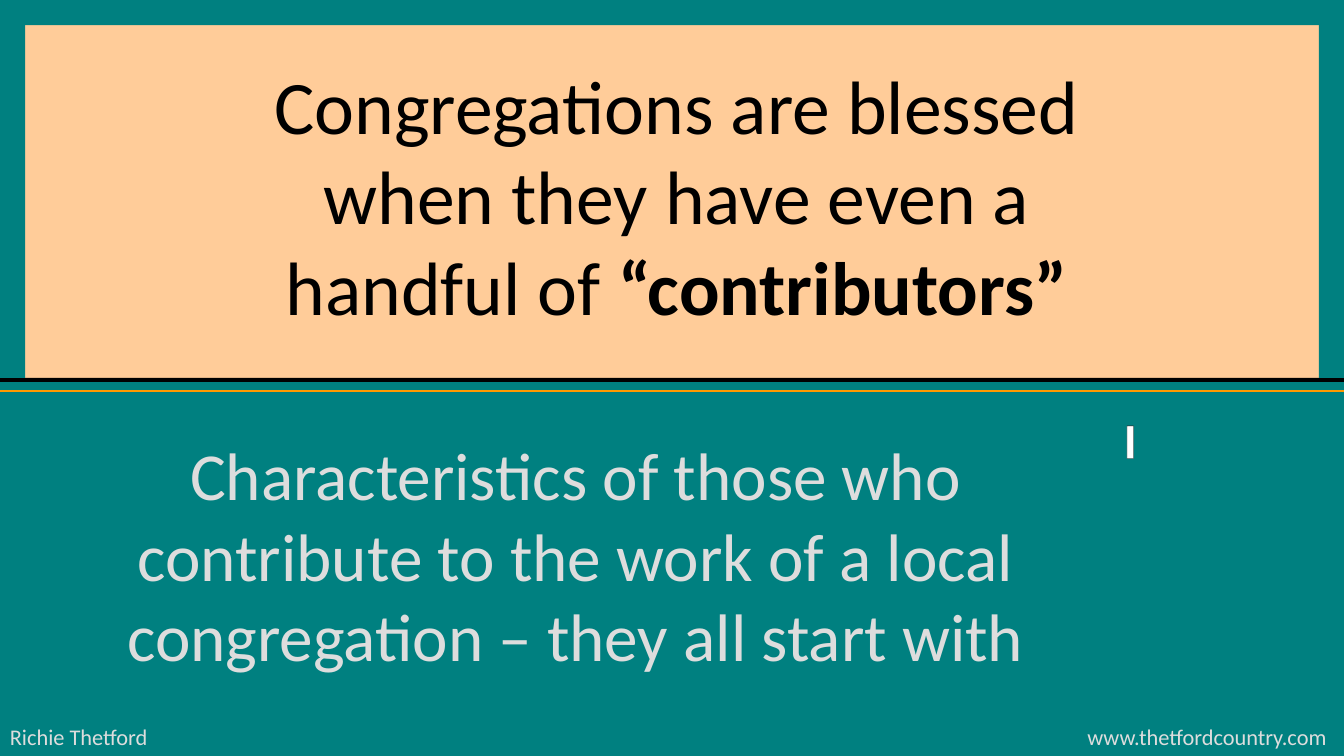
from lxml.etree import SubElement
from pptx import Presentation
from pptx.dml.color import RGBColor
from pptx.enum.shapes import MSO_CONNECTOR, MSO_SHAPE
from pptx.enum.text import MSO_ANCHOR, PP_ALIGN
from pptx.oxml import parse_xml
from pptx.oxml.ns import qn
from pptx.util import Inches, Pt

COLORS = {
    "teal": "008080",
    "peach": "FFCC99",
    "black": "000000",
    "orange": "FF9900",
    "gray": "DDDDDD",
    "white": "FFFFFF",
}
FONT = "Calibri"
SLIDE_W, SLIDE_H = 13.33, 7.5
BANNER_H = 3.75
FRAME = 0.25


def rgb(name):
    return RGBColor.from_string(COLORS[name])


def add_bar(slide, left, top, width, height, color):
    bar = slide.shapes.add_shape(
        MSO_SHAPE.RECTANGLE, Inches(left), Inches(top), Inches(width), Inches(height))
    bar.shadow.inherit = False
    bar.fill.solid()
    bar.fill.fore_color.rgb = rgb(color)
    bar.line.fill.background()


def add_rule(slide, left, right, y, color, weight):
    rule = slide.shapes.add_connector(
        MSO_CONNECTOR.STRAIGHT, Inches(left), Inches(y), Inches(right), Inches(y))
    rule.line.color.rgb = rgb(color)
    rule.line.width = Pt(weight)
    SubElement(rule._element.spPr, qn("a:effectLst"))


def outline_text(run, color, weight):
    outline = parse_xml(
        '<a:ln xmlns:a="http://schemas.openxmlformats.org/drawingml/2006/main" '
        f'w="{Pt(weight)}"><a:solidFill><a:srgbClr val="{COLORS[color]}"/>'
        '</a:solidFill></a:ln>')
    run.font._element.insert(0, outline)


def add_text(slide, text, left, top, width, height, *, size, color, bold=False,
             bold_tail="", align=PP_ALIGN.CENTER, anchor=MSO_ANCHOR.TOP,
             wrap=True, outline=None, right_tab=None):
    box = slide.shapes.add_textbox(
        Inches(left), Inches(top), Inches(width), Inches(height))
    frame = box.text_frame
    frame.word_wrap = wrap
    frame.vertical_anchor = anchor
    paragraph = frame.paragraphs[0]
    paragraph.alignment = align
    if right_tab:
        tabs = SubElement(paragraph._p.get_or_add_pPr(), qn("a:tabLst"))
        SubElement(tabs, qn("a:tab"), pos=str(Inches(right_tab)), algn="r")
    for part, is_bold in ((text, bold), (bold_tail, True)):
        if not part:
            continue
        run = paragraph.add_run()
        run.text = part
        run.font.name = FONT
        run.font.size = Pt(size)
        run.font.bold = is_bold
        run.font.color.rgb = rgb(color)
        if outline:
            outline_text(run, outline, 0.75)


def main():
    prs = Presentation()
    prs.slide_width, prs.slide_height = Inches(SLIDE_W), Inches(SLIDE_H)
    slide = prs.slides.add_slide(prs.slide_layouts[6])
    slide.background.fill.solid()
    slide.background.fill.fore_color.rgb = rgb("teal")

    # Banner and the rules below it
    add_bar(slide, 0, 0, SLIDE_W, BANNER_H, "peach")
    add_bar(slide, 0, BANNER_H, SLIDE_W, 0.04, "black")
    add_rule(slide, 0, SLIDE_W, 3.88, "orange", 1)

    # Title, subtitle and the initial letter
    add_text(slide, "Congregations are blessed when they have even a handful of ",
             2, 0.5, 9.42, 2.83, size=54, color="black",
             bold_tail="“contributors”", anchor=MSO_ANCHOR.BOTTOM)
    add_text(slide, "Characteristics of those who contribute to the work of a local "
             "congregation – they all start with",
             1, 4.25, 9.42, 2.41, size=48, color="gray")
    add_text(slide, "I", 10.75, 4, 0.92, 2.83, size=36, color="white",
             bold=True, wrap=False, outline="black")

    # Teal frame around the banner
    for left in (0, SLIDE_W - FRAME):
        add_bar(slide, left, 0, FRAME, BANNER_H, "teal")
    add_bar(slide, 0, 0, SLIDE_W, FRAME, "teal")

    # Footer
    add_text(slide, "Richie Thetford\twww.thetfordcountry.com",
             0, 7.13, SLIDE_W, 0.37, size=16, color="gray",
             align=PP_ALIGN.LEFT, right_tab=13.06)

    prs.save("out.pptx")


if __name__ == "__main__":
    main()
